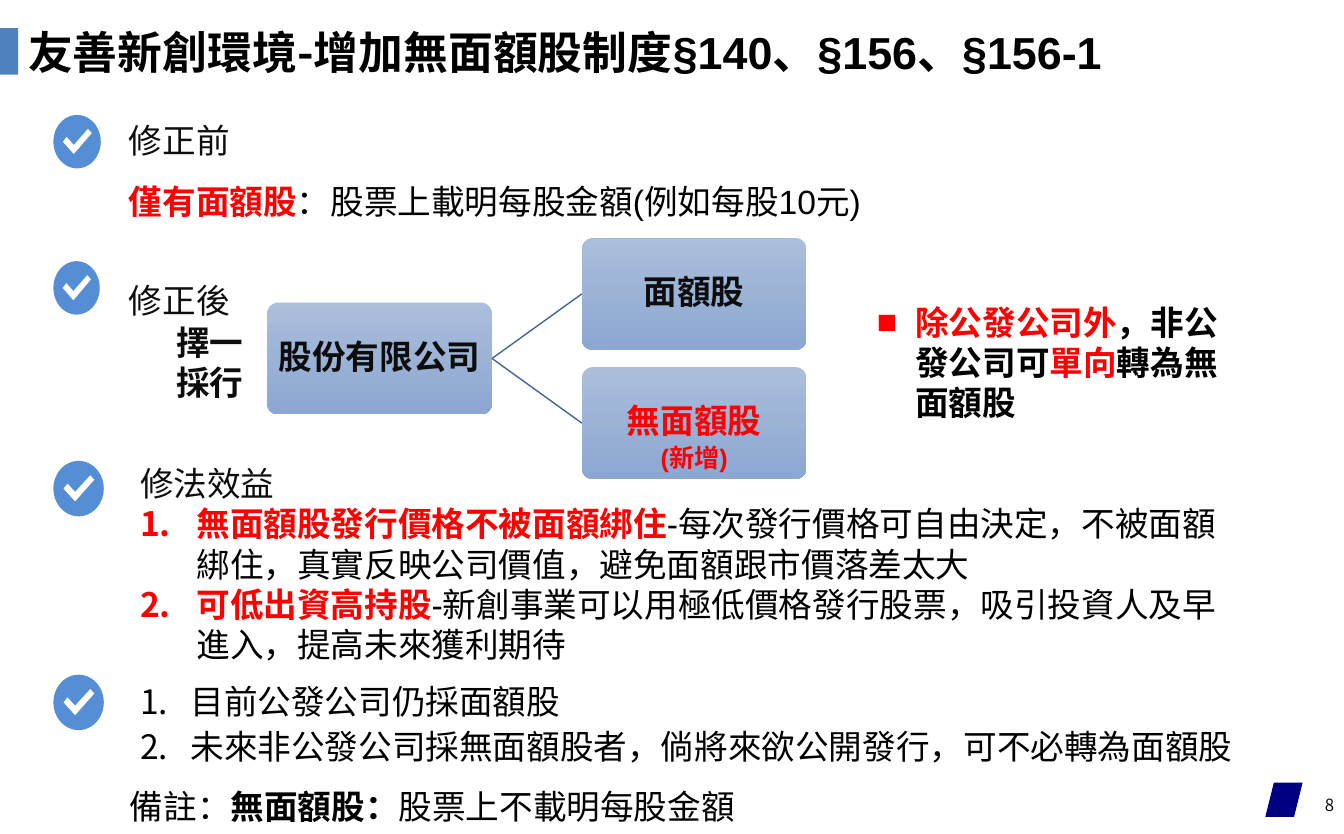
from dataclasses import dataclass

from lxml import etree
from pptx import Presentation
from pptx import util as u
from pptx.dml.color import RGBColor
from pptx.enum import shapes, text
from pptx.oxml import ns


@dataclass(frozen=True)
class Theme:
    accent: str = "4F81BD"
    badge: str = "558ED5"
    node_top: str = "ABBEDB"
    node_bottom: str = "8CA7D2"
    link: str = "3F6797"
    logo: str = "000080"
    black: str = "000000"
    dark: str = "0D0D0D"
    red: str = "FF0000"
    white: str = "FFFFFF"
    latin: str = "Arial"
    cjk: str = "Noto Sans CJK SC"
    title: int = 32
    body: int = 24
    small: int = 18
    number: int = 12


THEME = Theme()
LEFT, CENTER, RIGHT = text.PP_ALIGN.LEFT, text.PP_ALIGN.CENTER, text.PP_ALIGN.RIGHT
NUMBERED = "1."


def colour(value):
    return RGBColor.from_string(value)


# ---- Text ----
def set_bullet(para, bullet, indent):
    props = para._p.get_or_add_pPr()
    props.set("marL", str(u.Inches(indent)))
    props.set("indent", str(-u.Inches(indent)))
    if bullet == NUMBERED:
        etree.SubElement(props, ns.qn("a:buAutoNum"), type="arabicPeriod")
    else:
        etree.SubElement(props, ns.qn("a:buFont"), typeface=THEME.latin)
        etree.SubElement(props, ns.qn("a:buChar"), char=bullet)


def write(para, spans, size=THEME.body, font=THEME.latin, color=THEME.dark,
          bold=None, align=LEFT, spacing=None, bullet=None, indent=0):
    """Each span is a string, or a string with its own font settings."""
    if bullet:
        set_bullet(para, bullet, indent)
    para.alignment = align
    if spacing:
        para.line_spacing = spacing
    para.font.size = u.Pt(size)
    para.font.name = font
    para.font.bold = bold
    para.font.color.rgb = colour(color)
    for item in spans:
        words, own = (item, {}) if isinstance(item, str) else item
        span = para.add_run()
        span.text = words
        if "color" in own:
            span.font.color.rgb = colour(own["color"])
        if "bold" in own:
            span.font.bold = own["bold"]
        if "font" in own:
            span.font.name = own["font"]


def add_text(page, box, lines, wrap=True, anchor=text.MSO_ANCHOR.TOP):
    """Each line is a list of spans with its paragraph settings."""
    frame = page.shapes.add_textbox(*map(u.Inches, box)).text_frame
    frame.word_wrap = wrap
    frame.vertical_anchor = anchor
    for index, (spans, style) in enumerate(lines):
        para = frame.add_paragraph() if index else frame.paragraphs[0]
        write(para, spans, **style)
    return frame


# ---- Shapes ----
def paint(shape, fill):
    shape.shadow.inherit = False
    shape.fill.solid()
    shape.fill.fore_color.rgb = colour(fill)
    shape.line.fill.background()


def add_plain(page, kind, box, fill):
    paint(page.shapes.add_shape(kind, *map(u.Inches, box)), fill)


def add_badge(page, box):
    left, top, width, height = box
    add_plain(page, shapes.MSO_SHAPE.OVAL, box, THEME.badge)
    tick = [(0.43, 0.73), (0.2, 0.5), (0.28, 0.41),
            (0.43, 0.56), (0.73, 0.26), (0.81, 0.34)]
    points = [(u.Inches(left + x * width), u.Inches(top + y * height)) for x, y in tick]
    outline = page.shapes.build_freeform(*points[0])
    outline.add_line_segments(points[1:], close=True)
    paint(outline.convert_to_shape(), THEME.white)


def add_node(page, box, label, color):
    node = page.shapes.add_shape(shapes.MSO_SHAPE.ROUNDED_RECTANGLE, *map(u.Inches, box))
    node.adjustments[0] = 0.1
    node.shadow.inherit = False
    node.line.fill.background()
    node.fill.gradient()
    node.fill.gradient_angle = 270
    for stop, shade in zip(node.fill.gradient_stops, (THEME.node_top, THEME.node_bottom)):
        stop.color.rgb = colour(shade)
    frame = node.text_frame
    frame.word_wrap = True
    frame.vertical_anchor = text.MSO_ANCHOR.MIDDLE
    frame.margin_left = frame.margin_right = u.Inches(0.05)
    write(frame.paragraphs[0], [label], font=THEME.cjk, color=color, bold=True,
          align=CENTER, spacing=0.9)
    return node


def add_link(page, start, end):
    link = page.shapes.add_connector(shapes.MSO_CONNECTOR.STRAIGHT, 0, 0, 0, 0)
    link.begin_connect(start, 3)
    link.end_connect(end, 1)
    link.line.color.rgb = colour(THEME.link)
    link.line.width = u.Pt(1)
    etree.SubElement(link._element.spPr, ns.qn("a:effectLst"))


# ---- Regions ----
def add_header(page, box):
    left, top, width, height = box
    add_plain(page, shapes.MSO_SHAPE.RECTANGLE, (left, top + 0.05, 0.18, 0.46), THEME.accent)
    title = ["友善新創環境-", ("增加無面額股制度§140、§156、§156-1", {"font": THEME.latin})]
    frame = add_text(page, (left + 0.18, top, width - 0.18, height),
                     [(title, dict(size=THEME.title, font=THEME.cjk, color=THEME.black,
                                   bold=True, spacing=0.9))],
                     anchor=text.MSO_ANCHOR.MIDDLE)
    frame.paragraphs[0].space_before = u.Pt(10)


def add_before(page, box):
    left, top, width, height = box
    add_badge(page, (left, top, 0.47, 0.53))
    rule = [("僅有面額股", {"color": THEME.red, "bold": True}),
            "：股票上載明每股金額(例如每股10元)"]
    add_text(page, (left + 0.65, top, width - 0.65, height),
             [(["修正前"], {}), (rule, dict(color=THEME.black, spacing=1.5))])


def add_after(page, box):
    left, top, width, height = box
    add_badge(page, (left, top + 0.23, 0.46, 0.53))
    add_text(page, (left + 0.65, top + 0.21, 1.5, 0.66),
             [(["修正後"], dict(spacing=u.Pt(40)))])
    add_text(page, (left + 1.12, top + 0.78, 0.89, 0.91),
             [([line], dict(bold=True)) for line in ("擇一", "採行")])

    # Company and the two kinds of share
    size = (2.23, 1.11)
    company = add_node(page, (left + 2.12, top + 0.64, *size), "股份有限公司", THEME.dark)
    for row, (label, color) in enumerate([("面額股", THEME.dark), ("無面額股", THEME.red)]):
        node = add_node(page, (left + 5.24, top + row * 1.28, *size), label, color)
        add_link(page, company, node)
    add_text(page, (left + 5.81, top + 1.98, 1.09, 0.4),
             [(["(新增)"], dict(size=THEME.small, color=THEME.red, bold=True, align=CENTER))])

    # Side note
    red = {"color": THEME.red}
    note = [("除公發公司外", red), "，非公發公司可", ("單向", red), "轉為無面額股"]
    add_text(page, (left + width - 3.83, top + 0.58, 3.83, 1.31),
             [(note, dict(font=THEME.cjk, color=THEME.black, bold=True,
                          bullet="■", indent=0.38))])


def add_benefits(page, box):
    left, top, width, height = box
    add_badge(page, (left, top + 0.03, 0.5, 0.55))
    benefits = [
        ("無面額股發行價格不被面額綁住",
         "-每次發行價格可自由決定，不被面額綁住，真實反映公司價值，避免面額跟市價落差太大"),
        ("可低出資高持股",
         "-新創事業可以用極低價格發行股票，吸引投資人及早進入，提高未來獲利期待"),
    ]
    style = dict(color=THEME.black, bullet=NUMBERED, indent=0.56)
    lines = [([(lead, {"color": THEME.red, "bold": True}), rest], style)
             for lead, rest in benefits]
    add_text(page, (left + 0.76, top, width - 0.76, height), [(["修法效益"], {})] + lines)


def add_outlook(page, box):
    left, top, width, height = box
    add_badge(page, (left, top + 0.03, 0.5, 0.55))
    style = dict(color=THEME.black, spacing=u.Pt(32))
    points = ["目前公發公司仍採面額股",
              "未來非公發公司採無面額股者，倘將來欲公開發行，可不必轉為面額股"]
    add_text(page, (left + 0.76, top, width - 0.76, 1),
             [([point], dict(style, bullet=NUMBERED, indent=0.5)) for point in points])
    remark = ["備註：", ("無面額股：", {"bold": True}), "股票上不載明每股金額"]
    add_text(page, (left + 0.66, top + 1.04, 6.27, 0.51), [(remark, style)], wrap=False)


def add_footer(page, box):
    left, top, width, height = box
    add_plain(page, shapes.MSO_SHAPE.PARALLELOGRAM, (left, top, 0.37, 0.34), THEME.logo)
    add_text(page, (left + 0.37, top + 0.07, width - 0.37, height - 0.07),
             [(["8"], dict(size=THEME.number, font=THEME.cjk, align=RIGHT))])


def main():
    deck = Presentation()
    deck.slide_width, deck.slide_height = u.Inches(13.33), u.Inches(8.27)
    page = deck.slides.add_slide(deck.slide_layouts[6])
    add_header(page, (0, 0.23, 12.03, 0.64))
    add_before(page, (0.53, 1.14, 10.65, 1.41))
    add_after(page, (0.53, 2.36, 11.9, 2.39))
    add_benefits(page, (0.53, 4.54, 11.85, 2.12))
    add_outlook(page, (0.53, 6.66, 11.85, 1.55))
    add_footer(page, (12.55, 7.76, 0.78, 0.51))
    deck.save("out.pptx")


if __name__ == "__main__":
    main()
